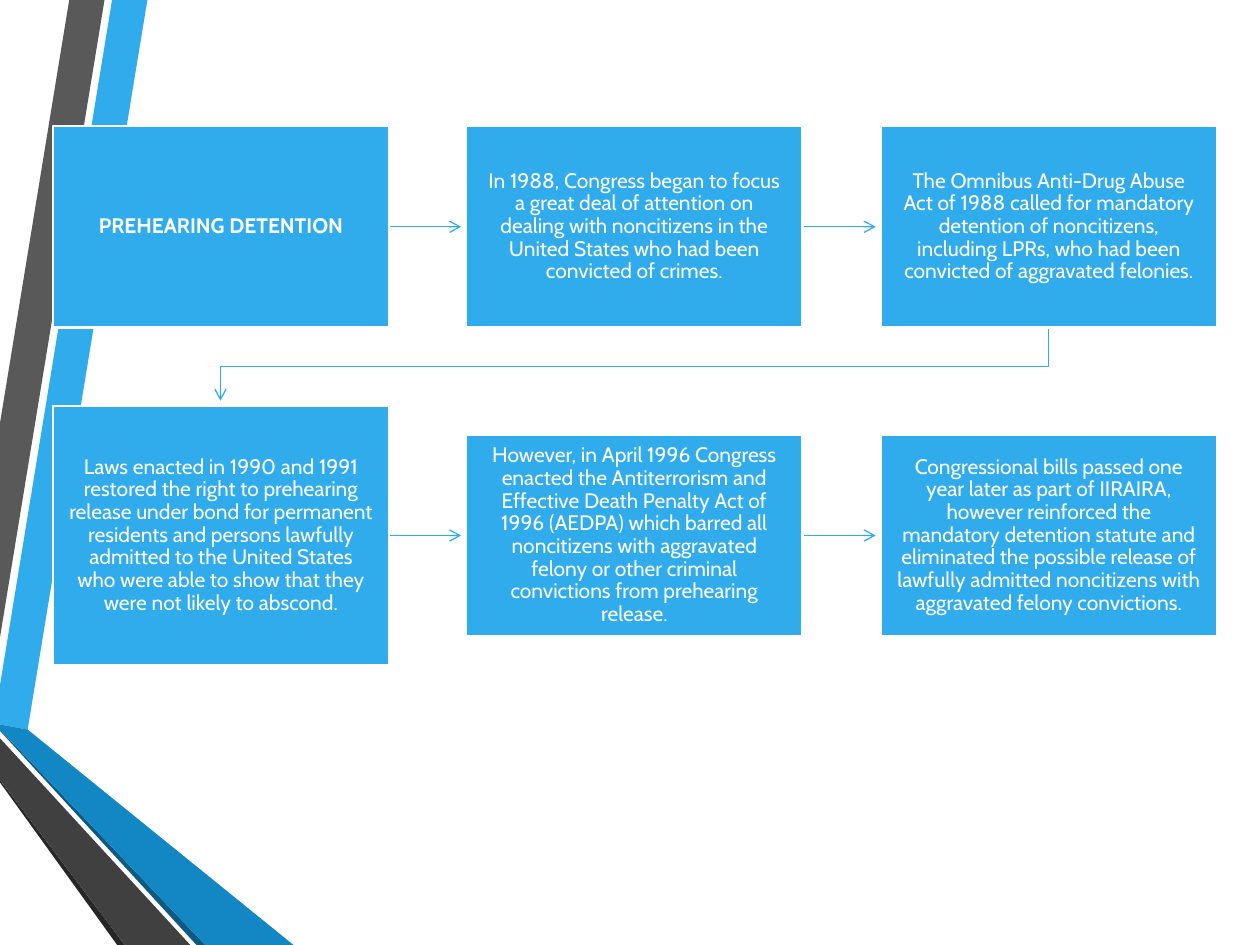
"""Build the prehearing detention process slide."""
import lxml.etree
import pptx
import pptx.dml.color
import pptx.enum.shapes
import pptx.enum.text
import pptx.oxml.ns
import pptx.util

PX = 9144
WIDTH, HEIGHT = 1000, 750

BLUE = pptx.dml.color.RGBColor(0x30, 0xAC, 0xEC)
MID_BLUE = pptx.dml.color.RGBColor(0x12, 0x87, 0xC3)
DEEP_BLUE = pptx.dml.color.RGBColor(0x0C, 0x5A, 0x82)
GRAY = pptx.dml.color.RGBColor(0x59, 0x59, 0x59)
DARK_GRAY = pptx.dml.color.RGBColor(0x40, 0x40, 0x40)
CHARCOAL = pptx.dml.color.RGBColor(0x26, 0x26, 0x26)
WHITE = pptx.dml.color.RGBColor(0xFF, 0xFF, 0xFF)

RIBBONS = [
    (BLUE, [(0, 544), (0, 575), (22, 579), (117, 0), (89, 0)]),
    (GRAY, [(83, 0), (55, 0), (0, 336), (0, 506)]),
    (CHARCOAL, [(0, 619), (0, 621), (93, 750), (99, 750)]),
    (DEEP_BLUE, [(0, 579), (0, 580), (156, 750), (163, 750)]),
    (MID_BLUE, [(0, 579), (163, 750), (233, 750), (22, 579), (0, 575)]),
    (DARK_GRAY, [(0, 619), (99, 750), (151, 750), (0, 586)]),
]

STEPS = [
    "PREHEARING DETENTION",
    "In 1988, Congress began to focus a great deal of attention on dealing with "
    "noncitizens in the United States who had been convicted of crimes.",
    "The Omnibus Anti-Drug Abuse Act of 1988 called for mandatory detention of "
    "noncitizens, including LPRs, who had been convicted of aggravated felonies.",
    "Laws enacted in 1990 and 1991 restored the right to prehearing release under "
    "bond for permanent residents and persons lawfully admitted to the United "
    "States who were able to show that they were not likely to abscond.",
    "However, in April 1996 Congress enacted the Antiterrorism and Effective Death "
    "Penalty Act of 1996 (AEDPA) which barred all noncitizens with aggravated "
    "felony or other criminal convictions from prehearing release.",
    "Congressional bills passed one year later as part of IIRAIRA, however "
    "reinforced the mandatory detention statute and eliminated the possible release "
    "of lawfully admitted noncitizens with aggravated felony convictions.",
]
COLUMNS = 3
STEP_WIDTH, STEP_HEIGHT, TALL_HEIGHT = 267, 160, 206
ROW_CENTERS = (80, 325)
ARROW_GAP = 4


def add_outline(slide, left, top, points, closed):
    """Add a freeform through points relative to left and top, without shadow."""
    builder = slide.shapes.build_freeform(*points[0], scale=PX)
    builder.add_line_segments(points[1:], close=closed)
    shape = builder.convert_to_shape(left * PX, top * PX)
    shape.shadow.inherit = False
    return shape


def draw_ribbons(slide, left, top):
    """Draw the folded ribbons along the left edge."""
    for color, points in RIBBONS:
        shape = add_outline(slide, left, top, points, True)
        shape.fill.solid()
        shape.fill.fore_color.rgb = color
        shape.line.fill.background()


def style_arrow(shape):
    """Give a line its colour, width and open arrowhead."""
    shape.line.color.rgb = BLUE
    shape.line.width = pptx.util.Pt(0.75)
    line = shape.element.spPr.find(pptx.oxml.ns.qn("a:ln"))
    lxml.etree.SubElement(line, pptx.oxml.ns.qn("a:tailEnd"), type="arrow")


def add_straight_arrow(slide, start, end, y):
    """Add a horizontal arrow from start to end."""
    connector = slide.shapes.add_connector(
        pptx.enum.shapes.MSO_CONNECTOR.STRAIGHT, start * PX, y * PX, end * PX, y * PX)
    style_arrow(connector)
    lxml.etree.SubElement(connector.element.spPr, pptx.oxml.ns.qn("a:effectLst"))


def add_return_arrow(slide, start_x, start_y, end_x, end_y):
    """Add the bent arrow that leads from one row to the next."""
    middle = (start_y + end_y + ARROW_GAP) // 2
    points = [(start_x, start_y), (start_x, middle), (end_x, middle), (end_x, end_y)]
    shape = add_outline(slide, 0, 0, points, False)
    shape.fill.background()
    style_arrow(shape)


def add_step(slide, left, top, width, height, text, bold):
    """Add one process box with centred text."""
    shape = slide.shapes.add_shape(
        pptx.enum.shapes.MSO_SHAPE.RECTANGLE, left * PX, top * PX, width * PX, height * PX)
    shape.shadow.inherit = False
    shape.fill.solid()
    shape.fill.fore_color.rgb = BLUE
    shape.line.color.rgb = WHITE
    shape.line.width = pptx.util.Pt(1.25)
    frame = shape.text_frame
    frame.word_wrap = True
    frame.vertical_anchor = pptx.enum.text.MSO_ANCHOR.MIDDLE
    frame.margin_left = frame.margin_right = 13 * PX
    frame.margin_top = frame.margin_bottom = 14 * PX
    paragraph = frame.paragraphs[0]
    paragraph.text = text
    paragraph.alignment = pptx.enum.text.PP_ALIGN.CENTER
    paragraph.line_spacing = 0.9
    paragraph.font.name = "Cabin"
    paragraph.font.size = pptx.util.Pt(12)
    paragraph.font.bold = bold
    paragraph.font.color.rgb = WHITE


def draw_process(slide, left, top, width):
    """Lay the steps out in rows and join them in reading order."""
    pitch = (width - STEP_WIDTH) / (COLUMNS - 1)
    for index, text in enumerate(STEPS):
        row, column = divmod(index, COLUMNS)
        x = left + round(column * pitch)
        center = top + ROW_CENTERS[row]
        height = TALL_HEIGHT if (row, column) == (1, 0) else STEP_HEIGHT
        if column < COLUMNS - 1:
            next_x = left + round((column + 1) * pitch)
            add_straight_arrow(slide, x + STEP_WIDTH, next_x - ARROW_GAP, center)
        elif row == 0:
            next_top = top + ROW_CENTERS[1] - TALL_HEIGHT // 2
            add_return_arrow(slide, x + STEP_WIDTH // 2, center + height // 2,
                             left + STEP_WIDTH // 2, next_top - ARROW_GAP)
        add_step(slide, x, center - height // 2, STEP_WIDTH, height, text, index == 0)


def main():
    """Create the presentation and save it."""
    presentation = pptx.Presentation()
    presentation.slide_width = WIDTH * PX
    presentation.slide_height = HEIGHT * PX
    slide = presentation.slides.add_slide(presentation.slide_layouts[6])
    draw_ribbons(slide, 0, 0)
    draw_process(slide, 42, 100, 924)
    presentation.save("out.pptx")


if __name__ == "__main__":
    main()
